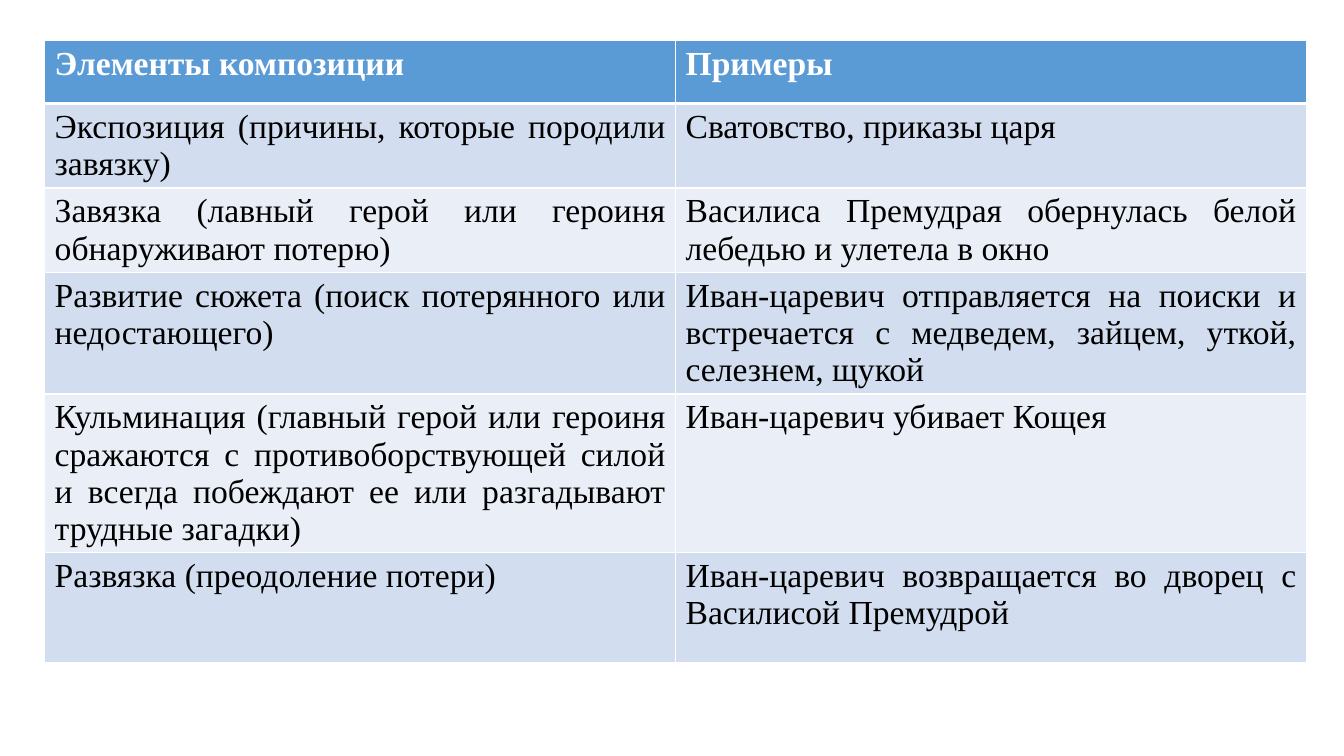
from dataclasses import dataclass

import pptx
import pptx.dml.color
import pptx.enum.text
import pptx.oxml
import pptx.oxml.ns
import pptx.util

Pt = pptx.util.Pt


@dataclass(frozen=True)
class Theme:
    font: str = "Times New Roman"
    size: float = 24
    head: str = "5B9BD5"
    bands: tuple = ("D2DEEF", "EAEFF7")
    white: str = "FFFFFF"
    black: str = "000000"
    thin: float = 1
    thick: float = 3


THEME = Theme()

LEFT, TOP = 31.9, 29
WIDTH = 450.7
HEIGHTS = (45, 33, 52, 77, 78.5, 78.5)
ROWS = (
    ("Элементы композиции", "Примеры"),
    ("Экспозиция (причины, которые породили завязку)",
     "Сватовство, приказы царя"),
    ("Завязка (лавный герой или героиня обнаруживают потерю)",
     "Василиса Премудрая обернулась белой лебедью и улетела в окно"),
    ("Развитие сюжета (поиск потерянного или недостающего)",
     "Иван-царевич отправляется на поиски и встречается с медведем, "
     "зайцем, уткой, селезнем, щукой"),
    ("Кульминация (главный герой или героиня сражаются с противоборствующей "
     "силой и всегда побеждают ее или разгадывают трудные загадки)",
     "Иван-царевич убивает Кощея"),
    ("Развязка (преодоление потери)",
     "Иван-царевич возвращается во дворец с Василисой Премудрой"),
)


def color(value):
    return pptx.dml.color.RGBColor.from_string(value)


def set_edge(cell, side, width):
    """Add a white border; call before the cell gets its fill."""
    props = cell._tc.get_or_add_tcPr()
    props.append(pptx.oxml.parse_xml(
        f'<a:{side} {pptx.oxml.ns.nsdecls("a")} w="{Pt(width)}">'
        f'<a:solidFill><a:srgbClr val="{THEME.white}"/></a:solidFill>'
        f'</a:{side}>'))


def fill_cell(cell, text, fill, ink, bold, edges):
    for side, width in edges.items():
        set_edge(cell, side, width)
    cell.fill.solid()
    cell.fill.fore_color.rgb = color(fill)
    cell.text_frame.text = text
    para = cell.text_frame.paragraphs[0]
    para.alignment = pptx.enum.text.PP_ALIGN.JUSTIFY
    font = para.runs[0].font
    font.name = THEME.font
    font.size = Pt(THEME.size)
    font.bold = bold
    font.color.rgb = color(ink)


def add_grid(slide):
    count = len(ROWS[0])
    frame = slide.shapes.add_table(
        len(ROWS), count, Pt(LEFT), Pt(TOP),
        Pt(WIDTH * count), Pt(sum(HEIGHTS)))
    table = frame.table
    for column in table.columns:
        column.width = Pt(WIDTH)
    for index, (texts, height) in enumerate(zip(ROWS, HEIGHTS)):
        table.rows[index].height = Pt(height)
        head = index == 0
        fill = THEME.head if head else THEME.bands[(index - 1) % 2]
        ink = THEME.white if head else THEME.black
        edges = dict.fromkeys(("lnL", "lnR", "lnT", "lnB"), THEME.thin)
        if head:
            edges["lnB"] = THEME.thick
        elif index == 1:
            edges["lnT"] = THEME.thick
        for col, text in enumerate(texts):
            fill_cell(table.cell(index, col), text, fill, ink, head, edges)


def main():
    deck = pptx.Presentation()
    deck.slide_width, deck.slide_height = Pt(960), Pt(540)
    slide = deck.slides.add_slide(deck.slide_layouts[6])
    add_grid(slide)
    deck.save("out.pptx")


if __name__ == "__main__":
    main()
